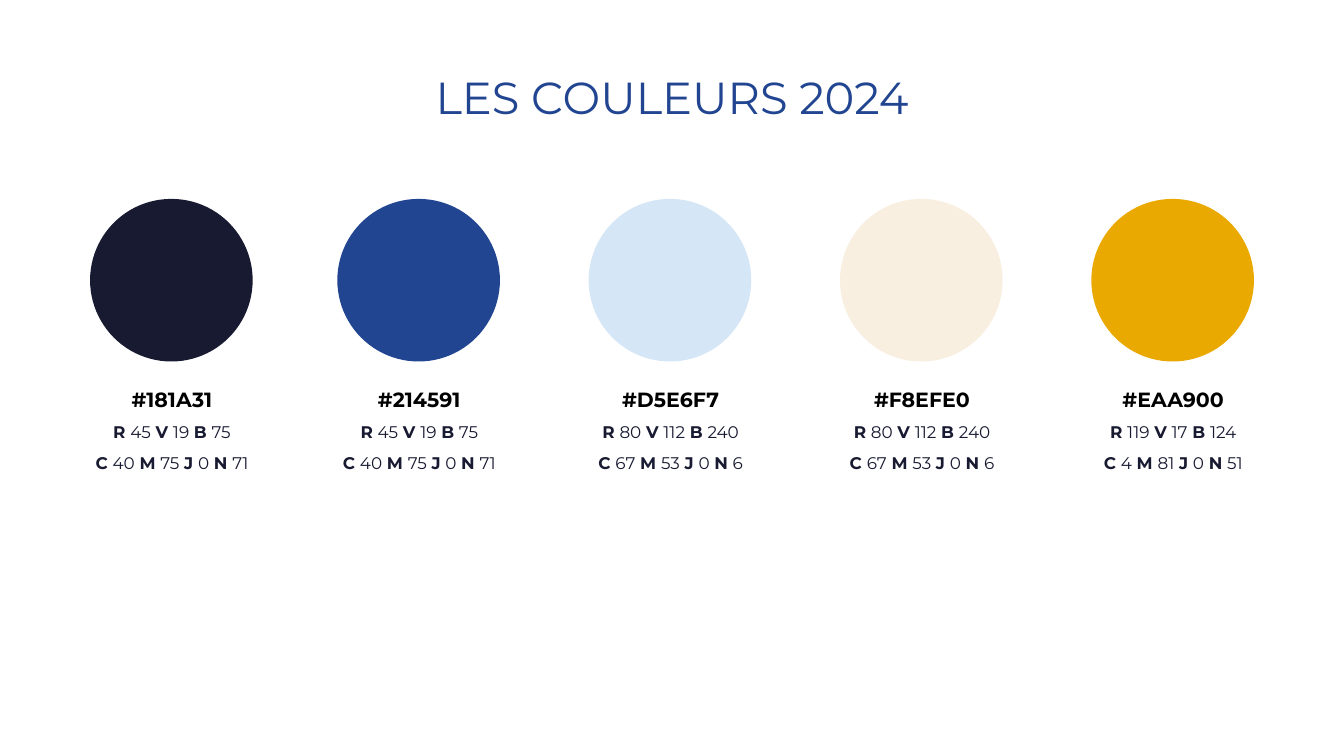
"""Build the 2024 colour palette slide."""

from dataclasses import dataclass

from pptx import Presentation
from pptx.dml.color import RGBColor
from pptx.enum.shapes import MSO_SHAPE
from pptx.enum.text import MSO_ANCHOR, MSO_AUTO_SIZE, PP_ALIGN
from pptx.util import Inches, Pt

OVAL = MSO_SHAPE.OVAL
CENTER = PP_ALIGN.CENTER
TOP = MSO_ANCHOR.TOP
MIDDLE = MSO_ANCHOR.MIDDLE
NO_FIT = MSO_AUTO_SIZE.NONE

FONT = "Montserrat"
COLORS = {
    "night": "181A31",
    "blue": "214591",
    "sky": "D5E6F7",
    "cream": "F8EFE0",
    "gold": "EAA900",
    "black": "000000",
}
SLIDE_WIDTH = Inches(10)
SLIDE_HEIGHT = SLIDE_WIDTH * 9 // 16
LABEL_WIDTH = 1.64
DIAMETER = 1.21
CIRCLE_INDENT = 0.21


@dataclass(frozen=True)
class Swatch:
    left: float
    color: str
    rvb: tuple[int, ...]
    cmjn: tuple[int, ...]


SWATCHES = [
    Swatch(0.46, "night", (45, 19, 75), (40, 75, 0, 71)),
    Swatch(2.30, "blue", (45, 19, 75), (40, 75, 0, 71)),
    Swatch(4.17, "sky", (80, 112, 240), (67, 53, 0, 6)),
    Swatch(6.04, "cream", (80, 112, 240), (67, 53, 0, 6)),
    Swatch(7.91, "gold", (119, 17, 124), (4, 81, 0, 51)),
]


def rgb(name: str) -> RGBColor:
    return RGBColor.from_string(COLORS[name])


def add_run(p, text: str, *, size: float, color: str, bold: bool = False) -> None:
    r = p.add_run()
    r.text = text
    r.font.name = FONT
    r.font.size = Pt(size)
    r.font.bold = bold
    r.font.color.rgb = rgb(color)


def format_frame(tf, anchor) -> None:
    tf.word_wrap = True
    tf.auto_size = NO_FIT
    tf.vertical_anchor = anchor
    tf.margin_left = tf.margin_right = Inches(0.08)
    tf.margin_top = tf.margin_bottom = Inches(0.08)


def add_values(p, letters: str, values: tuple[int, ...]) -> None:
    for i, (letter, value) in enumerate(zip(letters, values)):
        label = f" {letter} " if i else f"{letter} "
        add_run(p, label, size=9, color="night", bold=True)
        add_run(p, str(value), size=9, color="night")


def add_title(s, text: str) -> None:
    sp = s.shapes.title
    sp.left, sp.top = Inches(0), Inches(0.24)
    sp.width, sp.height = SLIDE_WIDTH, Inches(0.96)
    format_frame(sp.text_frame, MIDDLE)
    p = sp.text_frame.paragraphs[0]
    p.alignment = CENTER
    add_run(p, text, size=24, color="blue")


def add_swatch(s, swatch: Swatch) -> None:
    sp = s.shapes.add_shape(
        OVAL,
        Inches(swatch.left + CIRCLE_INDENT),
        Inches(1.48),
        Inches(DIAMETER),
        Inches(DIAMETER),
    )
    sp.shadow.inherit = False
    sp.fill.solid()
    sp.fill.fore_color.rgb = rgb(swatch.color)
    sp.line.fill.background()

    box = s.shapes.add_textbox(
        Inches(swatch.left), Inches(2.71), Inches(LABEL_WIDTH), Inches(0.79)
    )
    tf = box.text_frame
    format_frame(tf, TOP)
    code, values = tf.paragraphs[0], tf.add_paragraph()
    for p in (code, values):
        p.alignment = CENTER
        p.line_spacing = 1.5
    add_run(code, f"#{COLORS[swatch.color]}", size=11, color="black", bold=True)
    add_values(values, "RVB", swatch.rvb)
    values.add_line_break()
    add_values(values, "CMJN", swatch.cmjn)


def main() -> None:
    prs = Presentation()
    prs.slide_width, prs.slide_height = SLIDE_WIDTH, SLIDE_HEIGHT
    s = prs.slides.add_slide(prs.slide_layouts[5])
    add_title(s, "LES COULEURS 2024")
    for swatch in SWATCHES:
        add_swatch(s, swatch)
    prs.save("out.pptx")


if __name__ == "__main__":
    main()
